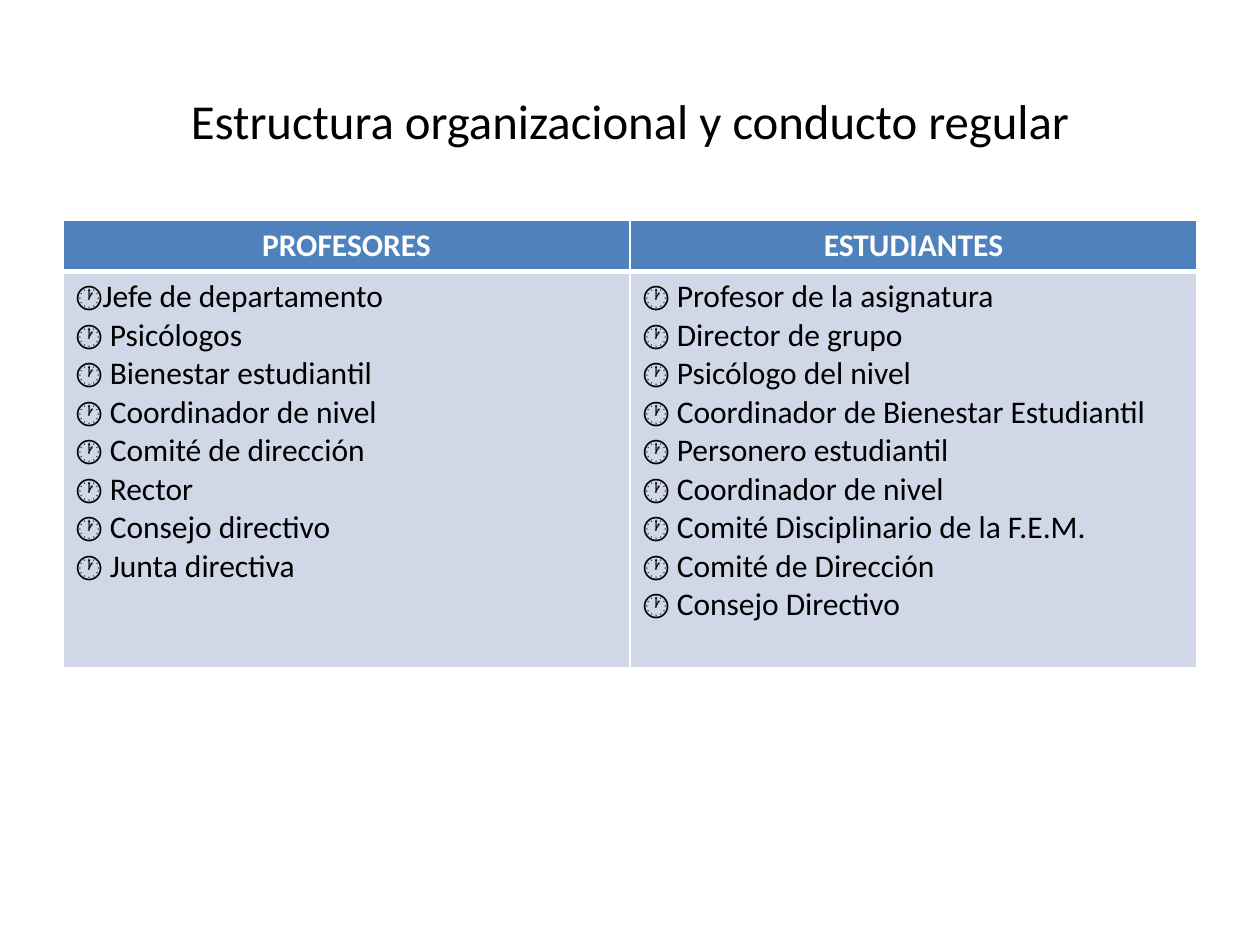
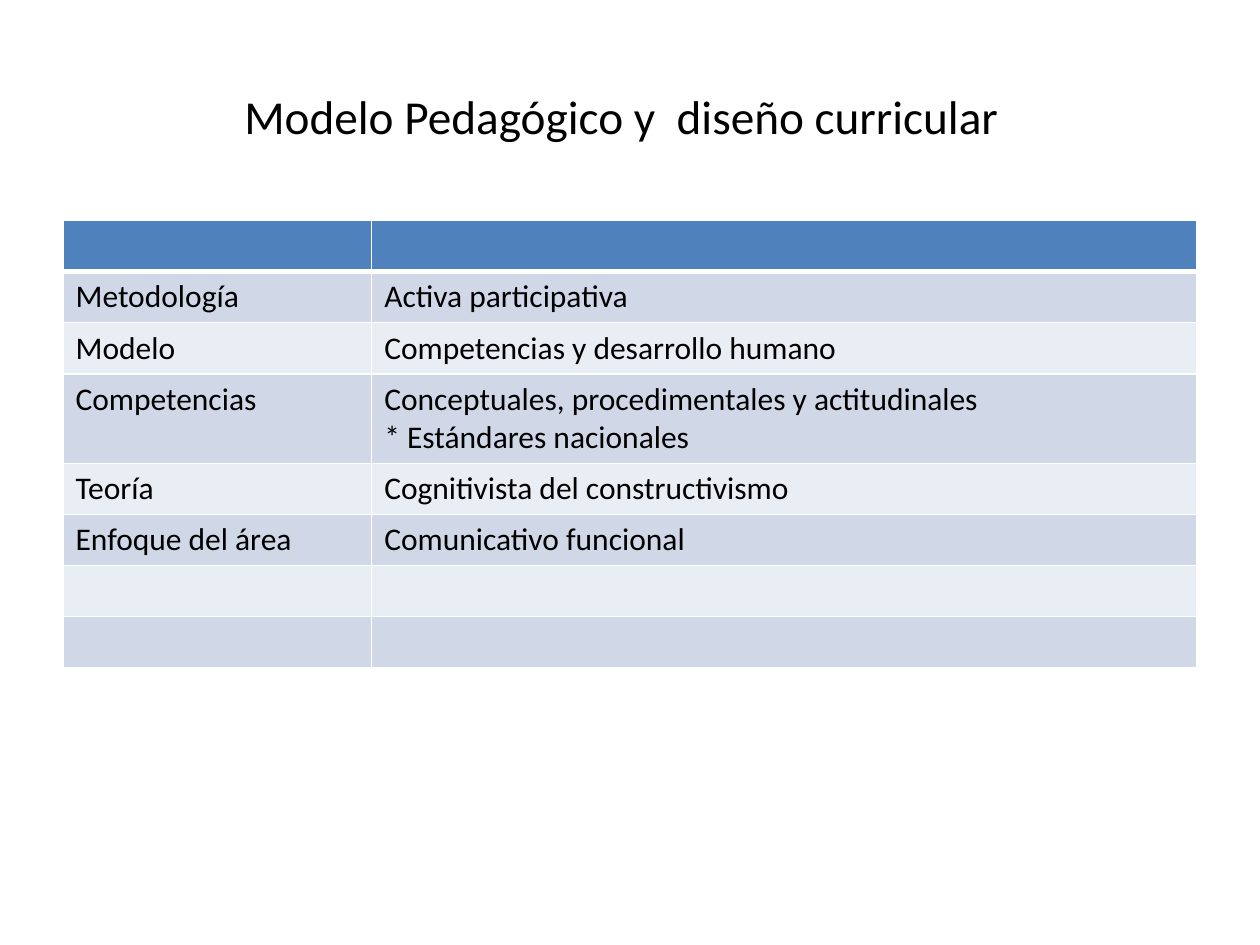
from lxml import etree
from pptx import Presentation
from pptx.dml.color import RGBColor
from pptx.enum.text import MSO_ANCHOR, PP_ALIGN
from pptx.oxml.ns import qn
from pptx.util import Pt

CENTER, LEFT = PP_ALIGN.CENTER, PP_ALIGN.LEFT
MIDDLE = MSO_ANCHOR.MIDDLE

COLORS = {
    "text": "000000",
    "header_text": "FFFFFF",
    "border": "FFFFFF",
    "header": "4F81BD",
    "band_dark": "D0D8E8",
    "band_light": "E9EDF4",
}
FONT = "Calibri"
CELL_SIZE = 18
ROW_H = 29.2
TABLE_BOX = (36, 126, 648)  # left, top, width
BULLET = "🕐"

TEACHERS = [
    "Jefe de departamento", " Psicólogos", " Bienestar estudiantil",
    " Coordinador de nivel", " Comité de dirección", " Rector",
    " Consejo directivo", " Junta directiva",
]
STUDENTS = [
    " Profesor de la asignatura", " Director de grupo", " Psicólogo del nivel",
    " Coordinador de Bienestar Estudiantil", " Personero estudiantil",
    " Coordinador de nivel", " Comité Disciplinario de la F.E.M.",
    " Comité de Dirección", " Consejo Directivo",
]
CURRICULUM = [
    ("Metodología", ["Activa participativa"]),
    ("Modelo", ["Competencias y desarrollo humano"]),
    ("Competencias", ["Conceptuales, procedimentales y actitudinales",
                      "* Estándares nacionales"]),
    ("Teoría", ["Cognitivista del constructivismo"]),
    ("Enfoque del área", ["Comunicativo funcional"]),
]


def color(name):
    return RGBColor.from_string(COLORS[name])


def add_lines(tf, lines, size, color_name="text", bold=False, align=LEFT):
    for i, line in enumerate(lines):
        p = tf.paragraphs[0] if i == 0 else tf.add_paragraph()
        p.alignment = align
        r = p.add_run()
        r.text = line
        r.font.name, r.font.size, r.font.bold = FONT, Pt(size), bold
        r.font.color.rgb = color(color_name)


def add_title(s, box, text, size, drop=0):
    """Centred title; drop lowers the text within its box."""
    sp = s.shapes.add_textbox(*map(Pt, box))
    tf = sp.text_frame
    tf.word_wrap = True
    tf.vertical_anchor = MIDDLE
    tf.margin_top = Pt(3.6 + 2 * drop)
    add_lines(tf, [text], size, align=CENTER)


def set_borders(cell, top, bottom):
    tc_pr = cell._tc.get_or_add_tcPr()
    for side, width in (("L", 1), ("R", 1), ("T", top), ("B", bottom)):
        ln = etree.SubElement(tc_pr, qn("a:ln" + side), w=str(Pt(width)))
        fill = etree.SubElement(ln, qn("a:solidFill"))
        etree.SubElement(fill, qn("a:srgbClr"), val=COLORS["border"])


def add_banded_table(s, box, col_widths, row_heights, rows):
    """rows holds one list of text lines per cell; the first row is the header."""
    left, top, width = box
    frame = s.shapes.add_table(len(rows), len(col_widths), Pt(left), Pt(top),
                               Pt(width), Pt(sum(row_heights)))
    table = frame.table
    for col, w in zip(table.columns, col_widths):
        col.width = Pt(w)
    for i, (row, h, texts) in enumerate(zip(table.rows, row_heights, rows)):
        row.height = Pt(h)
        header = i == 0
        band = "header" if header else "band_dark" if i % 2 else "band_light"
        for cell, lines in zip(row.cells, texts):
            # The line under the header is thicker than the rest
            set_borders(cell, 3 if i == 1 else 1, 3 if header else 1)
            cell.fill.solid()
            cell.fill.fore_color.rgb = color(band)
            add_lines(cell.text_frame, lines, CELL_SIZE,
                      "header_text" if header else "text", header,
                      CENTER if header else LEFT)


def organization_slide(s):
    add_title(s, (36, 21.6, 648, 90), "Estructura organizacional y conducto regular",
              27.9, drop=2)
    members = [[BULLET + name for name in group] for group in (TEACHERS, STUDENTS)]
    add_banded_table(s, TABLE_BOX, [324, 324], [ROW_H, 226.5],
                     [[["PROFESORES"], ["ESTUDIANTES"]], members])


def curriculum_slide(s):
    add_title(s, (31, 20.9, 648, 90), "Modelo Pedagógico y  diseño curricular", 27)
    empty = [[], []]
    rows = [empty, *([[name], lines] for name, lines in CURRICULUM), empty, empty]
    # Each extra line of text adds one line height to its row
    heights = [ROW_H + 22 * max(len(lines) - 1, 0) for _, lines in rows]
    add_banded_table(s, TABLE_BOX, [176.4, 471.6], heights, rows)


def main():
    prs = Presentation()
    prs.slide_width, prs.slide_height = Pt(720), Pt(540)
    for build in (organization_slide, curriculum_slide):
        build(prs.slides.add_slide(prs.slide_layouts[6]))
    prs.save("out.pptx")


if __name__ == "__main__":
    main()
